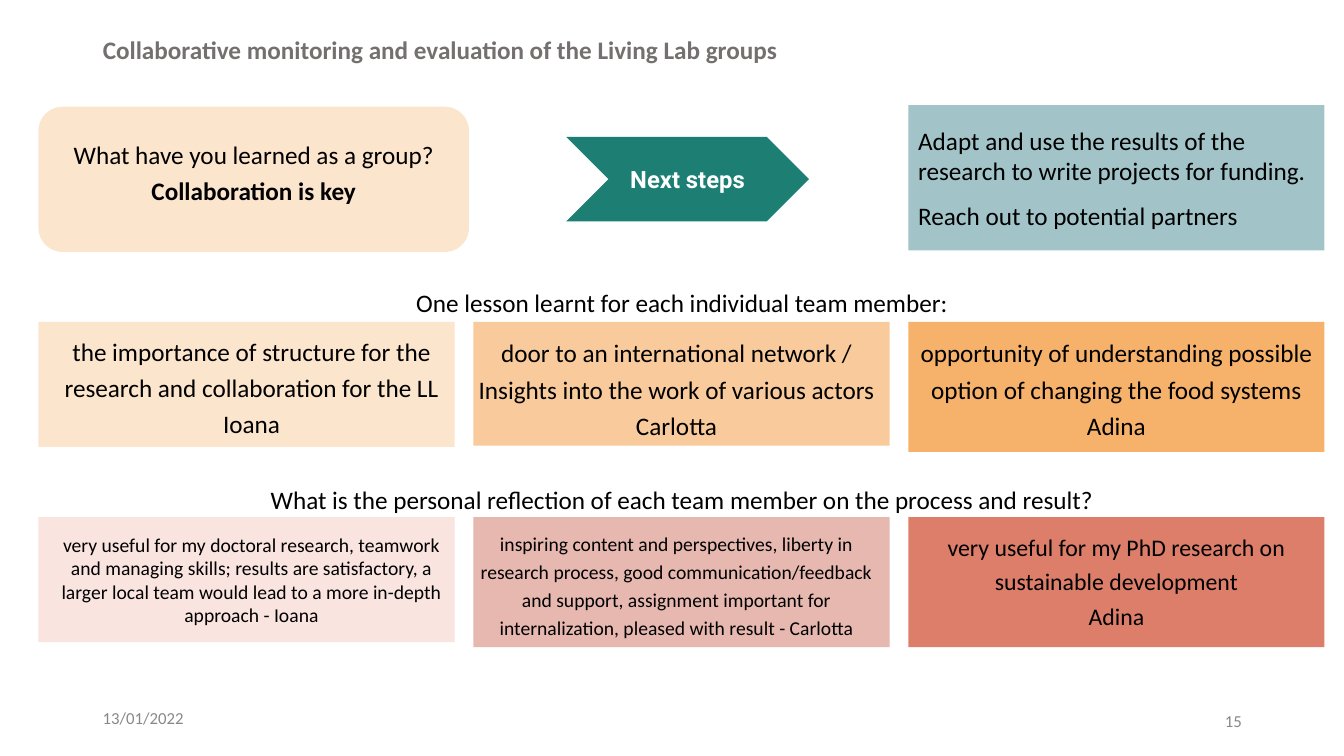
from dataclasses import dataclass

from pptx import Presentation
from pptx.dml.color import RGBColor
from pptx.enum.shapes import MSO_SHAPE
from pptx.enum.text import MSO_ANCHOR, PP_ALIGN
from pptx.util import Cm, Pt

LEFT, CENTER, RIGHT = PP_ALIGN.LEFT, PP_ALIGN.CENTER, PP_ALIGN.RIGHT
TOP, MIDDLE = MSO_ANCHOR.TOP, MSO_ANCHOR.MIDDLE
RECTANGLE, CHEVRON = MSO_SHAPE.RECTANGLE, MSO_SHAPE.CHEVRON
ROUNDED = MSO_SHAPE.FLOWCHART_ALTERNATE_PROCESS
TITLE_ONLY = 5


@dataclass(frozen=True)
class Theme:
    body_font: str = "Calibri"
    label_font: str = "Roboto"
    ink: str = "000000"
    white: str = "FFFFFF"
    title_grey: str = "757070"
    footer_grey: str = "888888"
    green: str = "1D7E74"
    blue: str = "A2C4C9"
    oranges: tuple = ("FCE5CD", "F9CB9C", "F6B26B")
    reds: tuple = ("F9E4E0", "E6B8AF", "DD7E6B")
    text_size: float = 18
    label_size: float = 17
    small_size: float = 14
    footer_size: float = 12


@dataclass(frozen=True)
class Card:
    """A member's answer; the left inset shifts its centred text."""
    lines: tuple
    height: float
    size: float
    spacing: float = 1.2
    anchor: MSO_ANCHOR = TOP
    left_inset: float = 0.25


@dataclass(frozen=True)
class Question:
    text: str
    top: float
    cards_top: float
    fills: tuple
    cards: tuple


THEME = Theme()
MARGIN, COLUMN_WIDTH, COLUMN_PITCH = 0.97, 10.49, 10.96
BANNER_WIDTH = 32.44

QUESTIONS = (
    Question("One lesson learnt for each individual team member:", 6.83, 8.11, THEME.oranges, (
        Card(("the importance of structure for the research and collaboration for the LL", "Ioana"),
             3.15, THEME.text_size, anchor=MIDDLE, left_inset=0.5),
        Card(("door to an international network /", "Insights into the work of various actors", "Carlotta"),
             3.12, THEME.text_size, left_inset=0),
        Card(("opportunity of understanding possible option of changing the food systems", "Adina"),
             3.28, THEME.text_size),
    )),
    Question("What is the personal reflection of each team member on the process and result?",
             11.79, 13.03, THEME.reds, (
        Card(("very useful for my doctoral research, teamwork and managing skills; results are "
              "satisfactory, a larger local team would lead to a more in-depth approach - Ioana",),
             3.15, THEME.small_size, spacing=1, anchor=MIDDLE, left_inset=0.5),
        Card(("inspiring content and perspectives, liberty in",
              "research process, good communication/feedback",
              "and support, assignment important for internalization, pleased with result - Carlotta"),
             3.28, THEME.small_size, left_inset=0),
        Card(("very useful for my PhD research on sustainable development", "Adina"),
             3.28, THEME.label_size),
    )),
)


def place(shape, left: float, top: float, width: float, height: float) -> None:
    shape.left, shape.top, shape.width, shape.height = Cm(left), Cm(top), Cm(width), Cm(height)


def write(shape, *lines: str, size: float = THEME.text_size, color: str = THEME.ink,
          font: str = THEME.body_font, bold: bool = False, bold_last: bool = False,
          align: PP_ALIGN = CENTER, anchor: MSO_ANCHOR = TOP, spacing: float = 1,
          gap: float = 0, left_inset: float = 0.25, inset: float = 0.25) -> None:
    """Fill a shape with one paragraph per line; gap is the space between them."""
    frame = shape.text_frame
    frame.word_wrap = True
    frame.vertical_anchor = anchor
    frame.margin_left, frame.margin_right = Cm(left_inset), Cm(0.25)
    frame.margin_top = frame.margin_bottom = Cm(inset)
    for index, line in enumerate(lines):
        para = frame.add_paragraph() if index else frame.paragraphs[0]
        para.alignment = align
        para.line_spacing = spacing
        para.space_before = Pt(gap if index else 0)
        span = para.add_run()
        span.text = line
        span.font.name = font
        span.font.size = Pt(size)
        span.font.bold = bold or (bold_last and index == len(lines) - 1)
        span.font.color.rgb = RGBColor.from_string(color)


def add_box(page, kind: MSO_SHAPE, fill: str, left: float, top: float, width: float, height: float):
    box = page.shapes.add_shape(kind, Cm(left), Cm(top), Cm(width), Cm(height))
    box.shadow.inherit = False
    box.fill.solid()
    box.fill.fore_color.rgb = RGBColor.from_string(fill)
    box.line.fill.background()
    return box


def add_text(page, left: float, top: float, width: float, height: float):
    return page.shapes.add_textbox(Cm(left), Cm(top), Cm(width), Cm(height))


def add_header(page) -> None:
    title = page.shapes.title
    place(title, 2.34, 0.38, 25.88, 1.83)
    write(title, "Collaborative monitoring and evaluation of the Living Lab groups",
          color=THEME.title_grey, bold=True, align=LEFT, anchor=MIDDLE, spacing=0.9, inset=0.13)


def add_group_row(page) -> None:
    add_box(page, ROUNDED, THEME.oranges[0], MARGIN, 2.69, 10.85, 3.66)
    write(add_text(page, MARGIN, 3.23, 10.85, 3.33), "What have you learned as a group?",
          "Collaboration is key", bold_last=True, spacing=1.2, inset=0.13)
    write(add_box(page, CHEVRON, THEME.green, 14.27, 3.45, 6.12, 2.13), "Next steps",
          size=THEME.label_size, color=THEME.white, font=THEME.label_font, bold=True, anchor=MIDDLE)
    write(add_box(page, RECTANGLE, THEME.blue, MARGIN + 2 * COLUMN_PITCH, 2.65, COLUMN_WIDTH, 3.66),
          "Adapt and use the results of the research to write projects for funding.",
          "Reach out to potential partners", align=LEFT, anchor=MIDDLE, gap=10)


def add_question(page, question: Question) -> None:
    write(add_text(page, MARGIN, question.top, BANNER_WIDTH, 1.27), question.text, spacing=1.2)
    for column, (card, fill) in enumerate(zip(question.cards, question.fills)):
        box = add_box(page, RECTANGLE, fill, MARGIN + column * COLUMN_PITCH,
                      question.cards_top, COLUMN_WIDTH, card.height)
        write(box, *card.lines, size=card.size, spacing=card.spacing,
              anchor=card.anchor, left_inset=card.left_inset)


def add_footer(page) -> None:
    for text, left, top, align in (("13/01/2022", 2.34, 17.58, LEFT), ("15", 23.93, 17.65, RIGHT)):
        write(add_text(page, left, top, 7.62, 1.02), text, size=THEME.footer_size,
              color=THEME.footer_grey, align=align, anchor=MIDDLE, inset=0.13)


def main() -> None:
    deck = Presentation()
    deck.slide_width, deck.slide_height = Cm(33.87), Cm(19.05)
    page = deck.slides.add_slide(deck.slide_layouts[TITLE_ONLY])
    add_header(page)
    add_group_row(page)
    for question in QUESTIONS:
        add_question(page, question)
    add_footer(page)
    deck.save("out.pptx")


if __name__ == "__main__":
    main()
